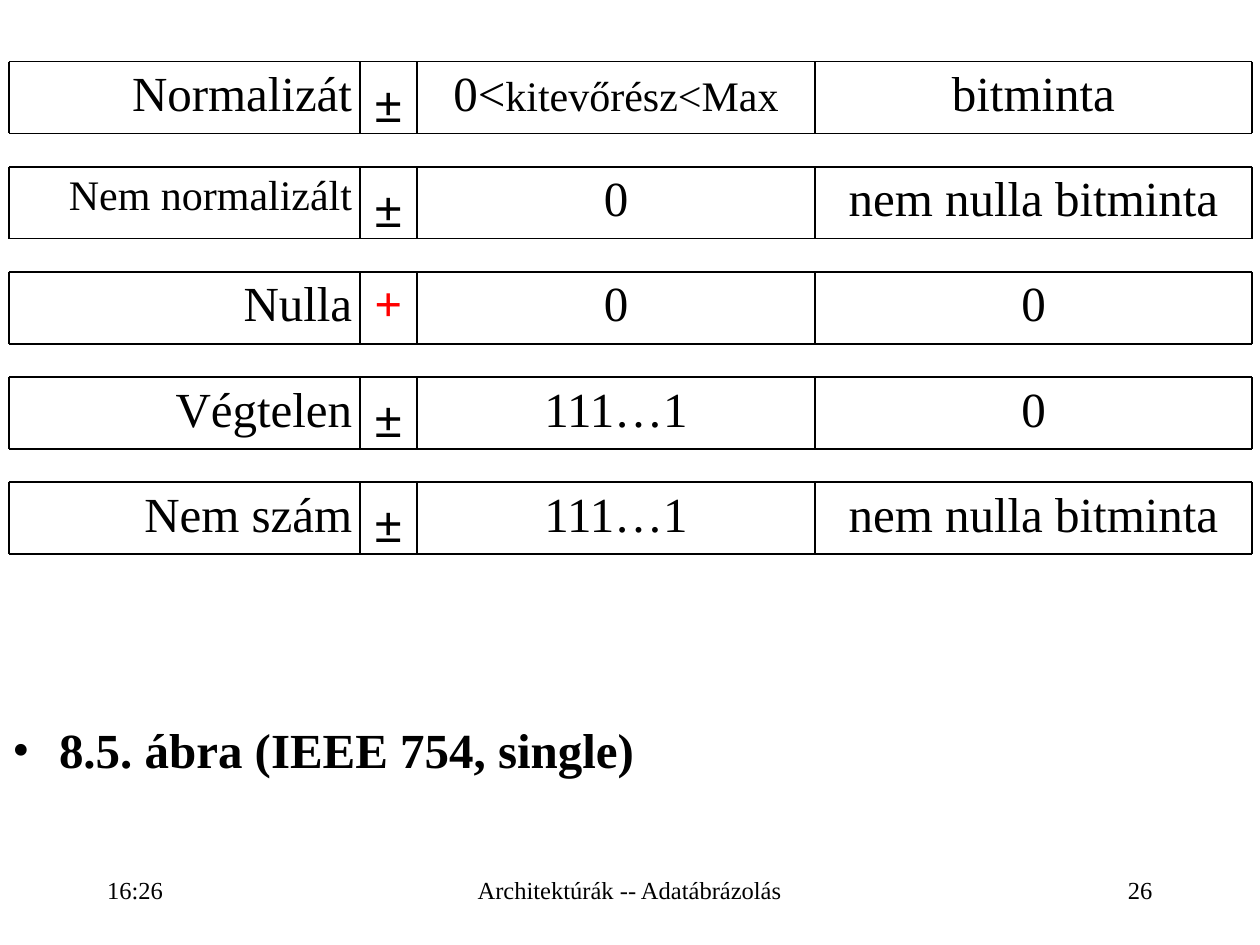
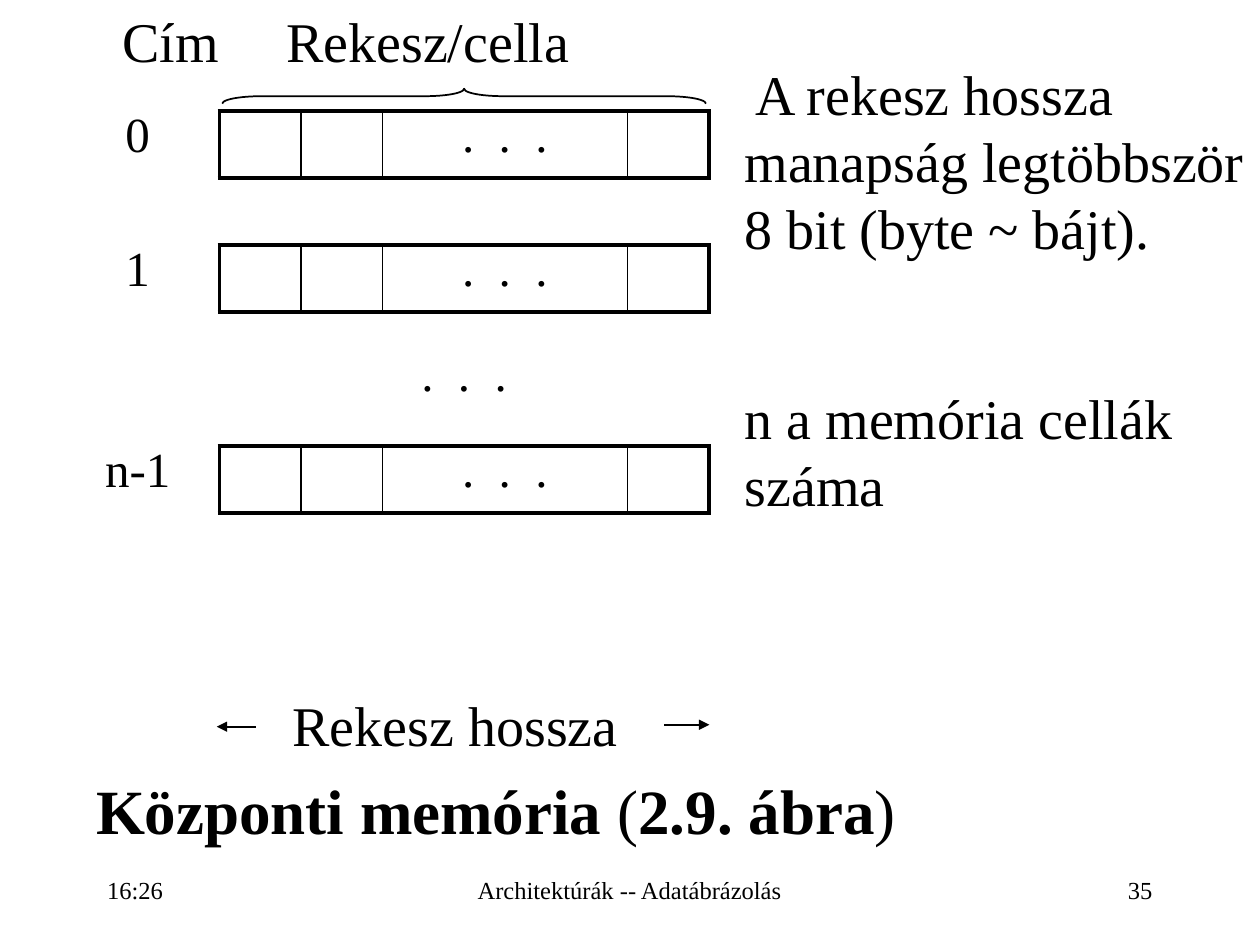
import pptx
import pptx.dml.color
import pptx.enum.shapes
import pptx.enum.text
import pptx.oxml
import pptx.oxml.ns
import pptx.util
import lxml.etree

Cm = pptx.util.Cm
Pt = pptx.util.Pt
ALIGN = pptx.enum.text.PP_ALIGN
ANCHOR = pptx.enum.text.MSO_ANCHOR

COLORS = {"ink": "000000", "accent": "FF0000"}
SERIF = "Times New Roman"
SANS = "Arial"
NO_TABLE_STYLE = "{2D5ABB26-0587-4C30-8999-92F81FD0307C}"
INSETS = {"margin_left": Cm(0.25), "margin_right": Cm(0.25),
          "margin_top": Cm(0.13), "margin_bottom": Cm(0.13)}
NO_INSETS = dict.fromkeys(INSETS, 0)
NARROW_INSETS = {**INSETS, "margin_left": Cm(0.15), "margin_right": Cm(0.15)}
CELL_INSETS = {**NARROW_INSETS, "margin_bottom": 0}
THIN, THICK = 1, 2.25
DOTS = ".  .  ."

FOOTERS = [("16:26", 1.91, 5.28, ALIGN.LEFT),
           ("Architektúrák -- Adatábrázolás", 8.68, 8.03, ALIGN.CENTER)]

FIELD_EDGES = [0.18, 7.25, 8.41, 16.43, 25.24]
FIELD_HEIGHT = 1.45
NUMBER_FORMATS = [
    ("Normalizát", "±", [("0<", {}), ("kitevőrész<Max", {"size": Pt(24)})], "bitminta"),
    ([("Nem normalizált", {"size": Pt(24)})], "±", "0", "nem nulla bitminta"),
    ("Nulla", "+", "0", "0"),
    ("Végtelen", "±", "111…1", "0"),
    ("Nem szám", "±", "111…1", "nem nulla bitminta"),
]
SIGN_STYLES = {"±": {"font": SANS}, "+": {"color": "accent", "bold": True}}


def apply_format(target, values):
    for name, value in values.items():
        setattr(target, name, value)


def rgb(color):
    return pptx.dml.color.RGBColor.from_string(COLORS[color])


def write_paragraph(paragraph, content, size, paragraph_format, font=SERIF, color="ink", bold=False):
    runs = [(content, {})] if isinstance(content, str) else content
    apply_format(paragraph, paragraph_format)
    for text, changes in runs:
        run = paragraph.add_run()
        run.text = text
        apply_format(run.font, {"name": font, "size": Pt(size), "bold": bold, **changes})
        run.font.color.rgb = rgb(color)


def add_text(slide, paragraphs, left, top, width, height, size,
             anchor=ANCHOR.TOP, insets=INSETS, **style):
    box = slide.shapes.add_textbox(Cm(left), Cm(top), Cm(width), Cm(height))
    frame = box.text_frame
    apply_format(frame, {"word_wrap": True, "vertical_anchor": anchor, **insets})
    for index, (content, paragraph_format) in enumerate(paragraphs):
        paragraph = frame.add_paragraph() if index else frame.paragraphs[0]
        write_paragraph(paragraph, content, size, paragraph_format, **style)


def add_footers(slide, number):
    for text, left, width, alignment in FOOTERS + [(number, 18.2, 5.28, ALIGN.RIGHT)]:
        add_text(slide, [(text, {"alignment": alignment, "line_spacing": 0.93})],
                 left, 17.35, width, 1.25, 14, ANCHOR.MIDDLE)


def place_caption(slide, content, position, size, insets, paragraph_format, bold=False):
    title = slide.shapes.title
    apply_format(title, dict(zip(("left", "top", "width", "height"), map(Cm, position))))
    apply_format(title.text_frame, {
        "word_wrap": True, "vertical_anchor": ANCHOR.TOP,
        "auto_size": pptx.enum.text.MSO_AUTO_SIZE.NONE, **insets})
    paragraph = title.text_frame.paragraphs[0]
    write_paragraph(paragraph, content, size, paragraph_format, bold=bold)
    return paragraph


def add_bullet(paragraph, indent):
    properties = paragraph._p.get_or_add_pPr()
    properties.set("marL", str(Cm(indent)))
    properties.set("indent", str(-Cm(indent)))
    lxml.etree.SubElement(properties, pptx.oxml.ns.qn("a:buFont"), typeface=SERIF)
    lxml.etree.SubElement(properties, pptx.oxml.ns.qn("a:buChar"), char="•")


def add_line(slide, start_x, start_y, end_x, end_y, arrow=False):
    connector = slide.shapes.add_connector(
        pptx.enum.shapes.MSO_CONNECTOR.STRAIGHT,
        Cm(start_x), Cm(start_y), Cm(end_x), Cm(end_y))
    connector.line.color.rgb = rgb("ink")
    connector.line.width = Pt(THIN)
    if arrow:
        line = connector.line._get_or_add_ln()
        lxml.etree.SubElement(line, pptx.oxml.ns.qn("a:tailEnd"), type="triangle")
    lxml.etree.SubElement(connector._element.spPr, pptx.oxml.ns.qn("a:effectLst"))


def add_number_format(slide, top, fields):
    for index, content in enumerate(fields):
        left, right = FIELD_EDGES[index:index + 2]
        style = SIGN_STYLES.get(content, {}) if index == 1 else {}
        paragraph_format = {"alignment": ALIGN.CENTER if index else ALIGN.RIGHT,
                            "line_spacing": 1.09 if "font" in style else 0.93,
                            "space_before": Pt(7)}
        add_text(slide, [(content, paragraph_format)], left, top, right - left, FIELD_HEIGHT,
                 28, insets=NARROW_INSETS, **style)
    bottom = top + FIELD_HEIGHT
    for x in FIELD_EDGES:
        add_line(slide, x, top, x, bottom)
    for y in (top, bottom):
        add_line(slide, FIELD_EDGES[0], y, FIELD_EDGES[-1], y)


def add_plain_table(slide, row_count, left, top, column_widths, row_height):
    frame = slide.shapes.add_table(row_count, len(column_widths), Cm(left), Cm(top),
                                   Cm(sum(column_widths)), Cm(row_height * row_count))
    table = frame.table
    apply_format(table, {"first_row": False, "horz_banding": False})
    table._tbl.tblPr.find(pptx.oxml.ns.qn("a:tableStyleId")).text = NO_TABLE_STYLE
    for column, width in zip(table.columns, column_widths):
        column.width = Cm(width)
    for row in table.rows:
        row.height = Cm(row_height)
        for cell in row.cells:
            apply_format(cell, CELL_INSETS)
            cell.fill.background()
    return table


def set_borders(cell, **widths):
    properties = cell._tc.get_or_add_tcPr()
    sides = [side for side in "LRTB" if side in widths]
    for position, side in enumerate(sides):
        properties.insert(position, pptx.oxml.parse_xml(
            f'<a:ln{side} {pptx.oxml.ns.nsdecls("a")} w="{Pt(widths[side])}"><a:solidFill>'
            f'<a:srgbClr val="{COLORS["ink"]}"/></a:solidFill></a:ln{side}>'))


def write_cell(cell, content):
    write_paragraph(cell.text_frame.paragraphs[0], content, 28,
                    {"alignment": ALIGN.CENTER, "line_spacing": 0.8})


def fill_memory_row(table, row, address):
    cells = list(table.rows[row].cells)
    for column in range(2, 8):
        widths = {"T": THICK, "B": THICK}
        if column not in (5, 6):
            widths["L"] = THICK if column == 2 else THIN
        if column not in (4, 5):
            widths["R"] = THICK if column == 7 else THIN
        set_borders(cells[column], **widths)
    set_borders(cells[1], R=THICK)
    cells[0].merge(cells[1])
    cells[4].merge(cells[6])
    write_cell(cells[0], address)
    write_cell(cells[4], DOTS)


def add_memory_table(slide):
    table = add_plain_table(slide, 6, 1.13, 2.24, [1.645] * 8, 1.35)
    for row, address in ((0, "0"), (2, "1"), (5, "n-1")):
        fill_memory_row(table, row, address)
    gap = table.cell(3, 2)
    gap.merge(table.cell(4, 7))
    apply_format(gap, {"vertical_anchor": ANCHOR.MIDDLE, "margin_bottom": Cm(0.17)})
    write_cell(gap, DOTS)


def add_brace(slide, left, top, width, height):
    shape = slide.shapes.add_shape(
        pptx.enum.shapes.MSO_SHAPE.LEFT_BRACE,
        Cm(left + (width - height) / 2), Cm(top - (width - height) / 2), Cm(height), Cm(width))
    shape.rotation = 90
    shape.adjustments[0] = 2.633
    shape.shadow.inherit = False
    shape.fill.background()
    shape.line.color.rgb = rgb("ink")
    shape.line.width = Pt(THIN)


def build_number_formats(slide):
    for index, fields in enumerate(NUMBER_FORMATS):
        add_number_format(slide, 1.24 + 2.12 * index, fields)
    caption = place_caption(slide, "8.5. ábra (IEEE 754, single)", (0, 14.48, 25.4, 1.96), 28,
                            INSETS, {"alignment": ALIGN.LEFT, "line_spacing": 0.93}, bold=True)
    add_bullet(caption, 0.94)
    add_footers(slide, "26")


def build_memory(slide):
    add_memory_table(slide)
    add_brace(slide, 4.48, 1.79, 9.75, 0.3)
    centered, left_aligned = {"alignment": ALIGN.CENTER}, {"alignment": ALIGN.LEFT}
    add_text(slide, [("Cím", centered)], 1.51, 0, 3.86, 1.6, 32)
    add_text(slide, [("Rekesz/cella", left_aligned)], 5.52, 0, 8.3, 1.6, 32)
    add_text(slide, [("Rekesz hossza", centered)], 5.18, 13.8, 8, 1.6, 32)
    add_line(slide, 13.39, 14.61, 14.3, 14.61, arrow=True)
    add_line(slide, 5.16, 14.65, 4.37, 14.65, arrow=True)
    add_text(slide, [
        (" A rekesz hossza manapság legtöbbször 8 bit (byte ~ bájt).", left_aligned),
        ("n a memória cellák száma", {"space_before": Pt(70), **left_aligned}),
    ], 14.76, 1.07, 10.64, 9.73, 32)
    place_caption(slide, [("Központi memória ", {"bold": True}), ("(", {}),
                          ("2.9. ábra", {"bold": True}), (") ", {})],
                  (1.62, 15.72, 17.07, 1.7), 36, NO_INSETS,
                  {"alignment": ALIGN.CENTER, "line_spacing": 0.9})
    add_footers(slide, "35")


def main():
    presentation = pptx.Presentation()
    presentation.slide_width, presentation.slide_height = Cm(25.4), Cm(19.05)
    title_only = presentation.slide_layouts[5]
    for build in (build_number_formats, build_memory):
        build(presentation.slides.add_slide(title_only))
    presentation.save("out.pptx")


if __name__ == "__main__":
    main()
